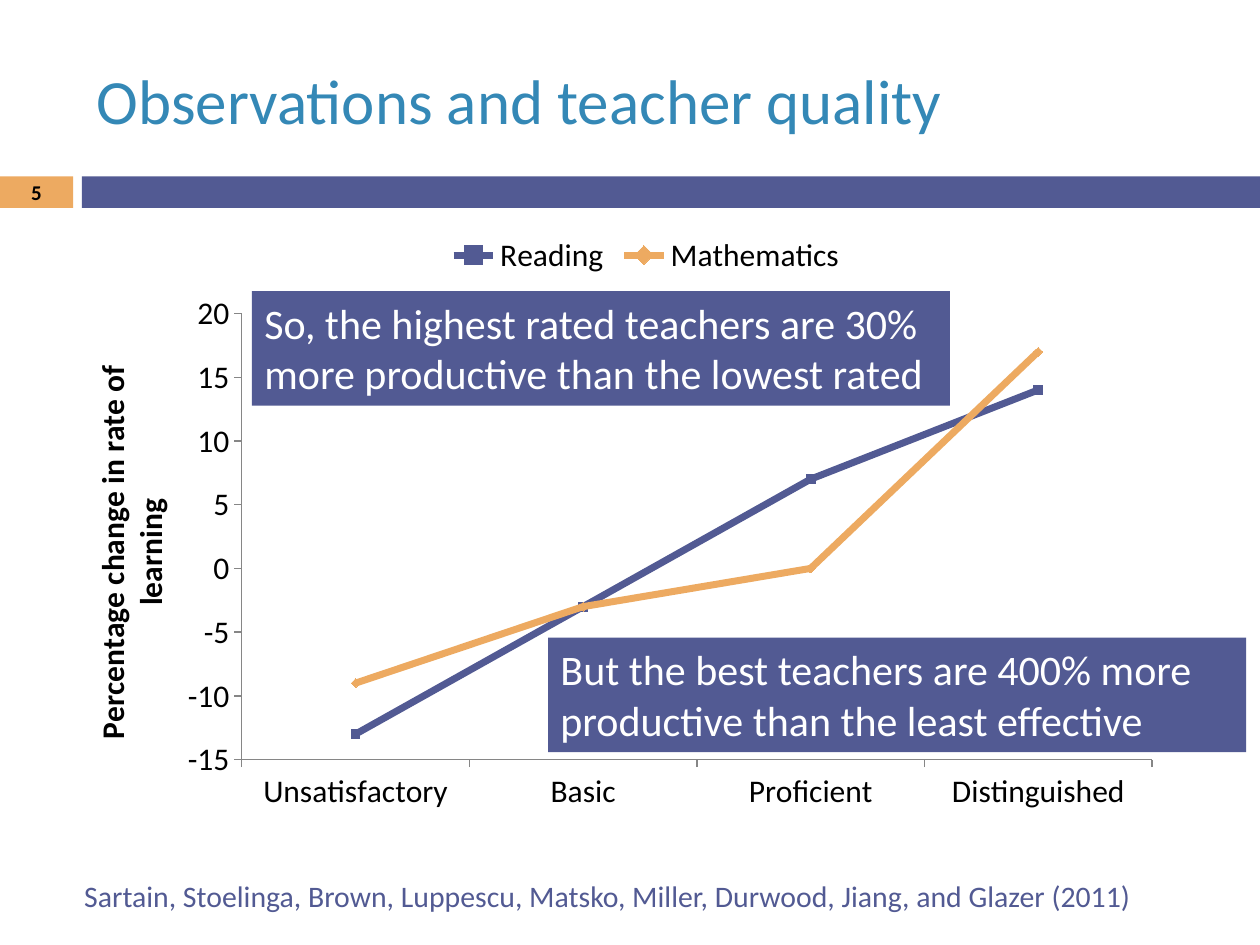
from lxml import etree
from pptx import Presentation
from pptx import util as u
from pptx.chart.data import CategoryChartData
from pptx.dml.color import RGBColor
from pptx.enum import chart as ch, shapes, text
from pptx.oxml import parse_xml
from pptx.oxml.ns import nsdecls, qn

FONT = "Calibri"
HUES = {"blue": "525A93", "gold": "EDAA61", "teal": "3488B6",
        "white": "FFFFFF", "black": "000000", "grey": "868686"}


def rgb(hue):
    return RGBColor.from_string(HUES[hue])


class Deck:
    """Holds the style and the current slide."""

    def __init__(self):
        self.prs = Presentation()
        self.prs.slide_width = u.Inches(10)
        self.prs.slide_height = u.Inches(7.5)
        self.slide = self.prs.slides.add_slide(self.prs.slide_layouts[6])

    def style(self, font, size, hue, bold=False):
        font.name, font.size, font.bold = FONT, u.Pt(size), bold
        font.color.rgb = rgb(hue)

    def fill(self, shape, words, size, hue, bold=False,
             align=text.PP_ALIGN.LEFT, anchor=text.MSO_ANCHOR.TOP):
        frame = shape.text_frame
        frame.word_wrap = True
        frame.vertical_anchor = anchor
        frame.text = words
        para = frame.paragraphs[0]
        para.alignment = align
        self.style(para.runs[0].font, size, hue, bold)

    def box(self, at, hue):
        rect = self.slide.shapes.add_shape(
            shapes.MSO_SHAPE.RECTANGLE, *map(u.Inches, at))
        rect.shadow.inherit = False
        rect.fill.solid()
        rect.fill.fore_color.rgb = rgb(hue)
        rect.line.fill.background()
        return rect

    def label(self, at, words, size, hue, **more):
        area = self.slide.shapes.add_textbox(*map(u.Inches, at))
        self.fill(area, words, size, hue, **more)

    def callout(self, left, top, words):
        self.fill(self.box((left, top, 5.54, 0.91), "blue"),
                  words, 24, "white")

    def lines(self, at, cats, rows, title):
        data = CategoryChartData(number_format="0")
        data.categories = cats
        for name, vals, *_ in rows:
            data.add_series(name, vals)
        chart = self.slide.shapes.add_chart(
            ch.XL_CHART_TYPE.LINE_MARKERS, *map(u.Inches, at), data).chart
        self.style(chart.font, 18, "black")
        chart.has_title = False
        chart.has_legend = True
        chart.legend.position = ch.XL_LEGEND_POSITION.TOP
        chart.legend.include_in_layout = False

        # Axes
        val, cat = chart.value_axis, chart.category_axis
        val.minimum_scale, val.maximum_scale, val.major_unit = -15, 20, 5
        val.has_major_gridlines = False
        val.crosses = ch.XL_AXIS_CROSSES.MINIMUM
        val.tick_labels.number_format = "0"
        val.tick_labels.number_format_is_linked = False
        cat.tick_label_position = ch.XL_TICK_LABEL_POSITION.LOW
        for axis in (val, cat):
            axis.major_tick_mark = ch.XL_TICK_MARK.OUTSIDE
            axis.format.line.color.rgb = rgb("grey")
            axis.format.line.width = u.Pt(0.75)
        frame = val.axis_title.text_frame
        frame.text = title
        self.style(frame.paragraphs[0].runs[0].font, 18, "black", True)

        # Series
        plot = chart.plots[0]
        plot.vary_by_categories = False
        for line, (_, _, hue, mark) in zip(plot.series, rows):
            line.smooth = False
            line.format.line.color.rgb = rgb(hue)
            line.format.line.width = u.Pt(4)
            line.marker.style = mark
            line.marker.size = 5
            line.marker.format.fill.solid()
            line.marker.format.fill.fore_color.rgb = rgb(hue)
            line.marker.format.line.color.rgb = rgb(hue)
        self.place(chart, (0.14, 0.15, 0.81, 0.72))

    def place(self, chart, spot):
        """Fix the inner plot area, in shares of the chart."""
        area = chart.element.find(".//" + qn("c:plotArea"))
        for old in area.findall(qn("c:layout")):
            area.remove(old)
        layout = parse_xml("<c:layout %s><c:manualLayout/></c:layout>"
                           % nsdecls("c"))
        tags = ("layoutTarget", "xMode", "yMode", "x", "y", "w", "h")
        for tag, val in zip(tags, ("inner", "edge", "edge") + spot):
            etree.SubElement(layout[0], qn("c:" + tag)).set("val", str(val))
        area.insert(0, layout)


def main():
    deck = Deck()
    middle = text.MSO_ANCHOR.MIDDLE

    # Header band, title and slide number
    deck.box((0, 1.4, 0.58, 0.25), "gold")
    deck.box((0.65, 1.4, 9.35, 0.25), "blue")
    deck.label((0.67, 0.25, 8.92, 1.08), "Observations and teacher quality",
               36, "teal", anchor=middle)
    deck.label((0, 1.39, 0.58, 0.27), "5", 12, "black", bold=True,
               align=text.PP_ALIGN.CENTER, anchor=middle)

    # Chart of learning rate by rating
    mark = ch.XL_MARKER_STYLE
    deck.lines(
        (0.67, 1.75, 8.92, 4.92),
        ("Unsatisfactory", "Basic", "Proficient", "Distinguished"),
        (("Reading", (-13, -3, 7, 14), "blue", mark.SQUARE),
         ("Mathematics", (-9, -3, 0, 17), "gold", mark.DIAMOND)),
        "Percentage change in rate of learning")

    # Source and callouts
    deck.label((0.57, 6.92, 8.52, 0.39),
               "Sartain, Stoelinga, Brown, Luppescu, Matsko, Miller, "
               "Durwood, Jiang, and Glazer (2011)", 17, "blue")
    deck.callout(2, 2.31, "So, the highest rated teachers are 30% more "
                 "productive than the lowest rated")
    deck.callout(4.35, 5.06, "But the best teachers are 400% more "
                 "productive than the least effective")
    deck.prs.save("out.pptx")


if __name__ == "__main__":
    main()
